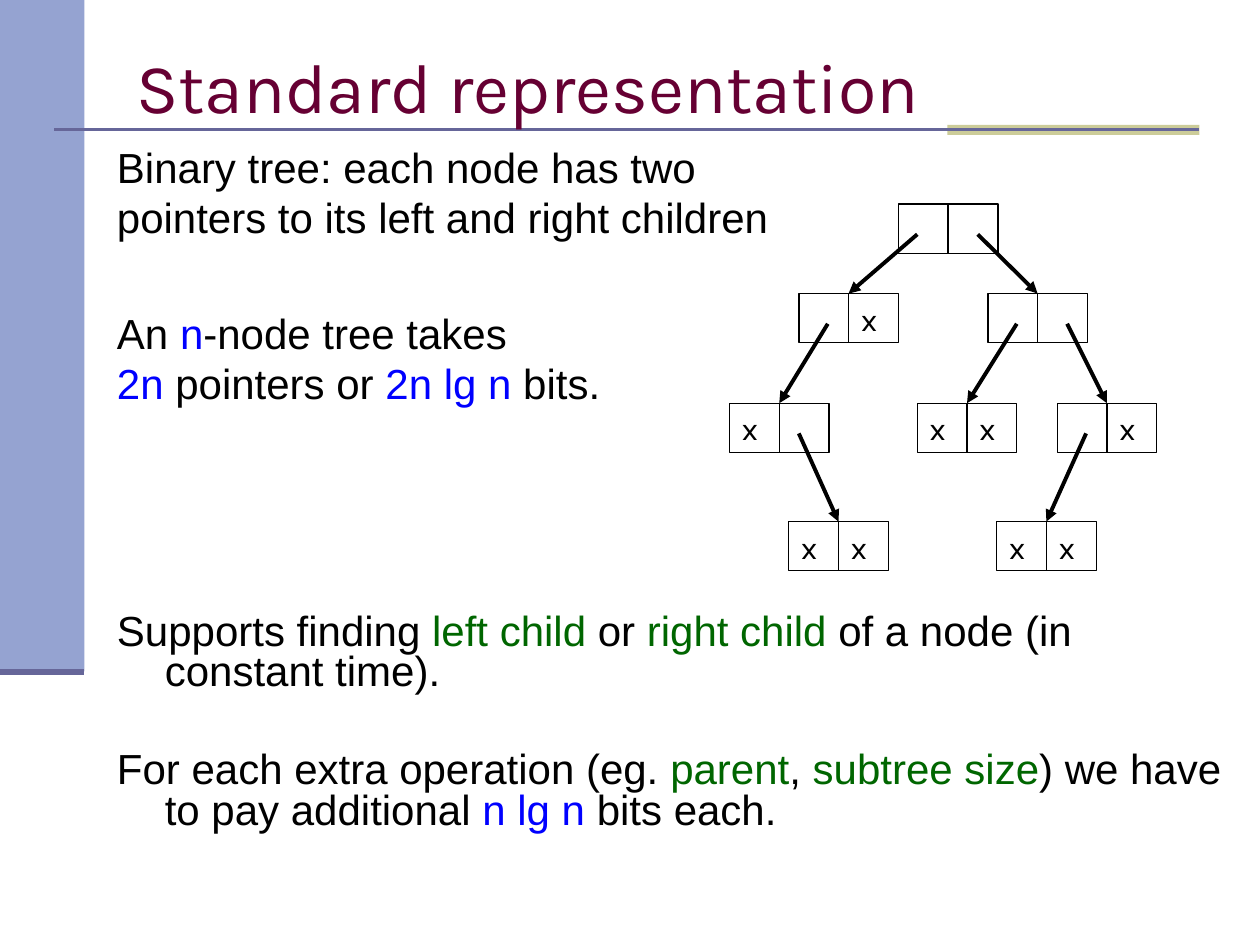
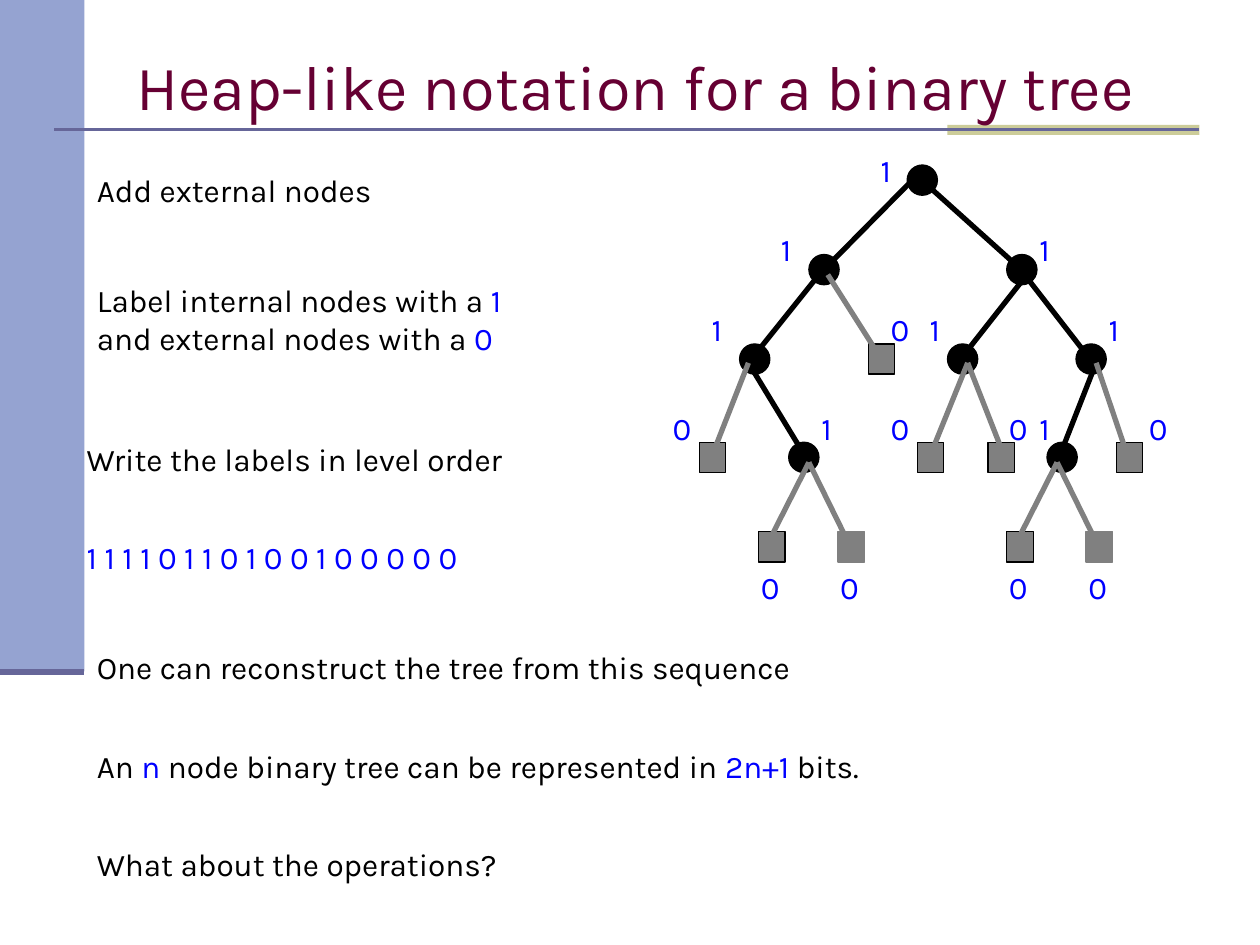
from lxml.etree import SubElement
from pptx import Presentation
from pptx.dml.color import RGBColor
from pptx.enum.shapes import MSO_CONNECTOR, MSO_SHAPE
from pptx.enum.text import MSO_ANCHOR, MSO_AUTO_SIZE, PP_ALIGN
from pptx.oxml.ns import qn
from pptx.util import Inches, Pt

BLACK = RGBColor(0x00, 0x00, 0x00)
WHITE = RGBColor(0xFF, 0xFF, 0xFF)
GRAY = RGBColor(0x80, 0x80, 0x80)
BLUE = RGBColor(0x00, 0x00, 0xFF)
GREEN = RGBColor(0x00, 0x66, 0x00)
MAROON = RGBColor(0x66, 0x00, 0x33)
PERIWINKLE = RGBColor(0x95, 0xA3, 0xD1)
SLATE = RGBColor(0x66, 0x66, 0x99)
KHAKI = RGBColor(0xCC, 0xCC, 0x99)

KARLA = {"name": "Karla", "size": Pt(18)}
ARIAL = {"name": "Arial", "size": Pt(24)}

SUMMARY = [
    (5.6, [("Binary tree: each node has two", BLACK)]),
    (5.6, [("pointers to its left and right children", BLACK)]),
    (43, [("An ", BLACK), ("n", BLUE), ("-node tree takes", BLACK)]),
    (5.6, [("2n", BLUE), (" pointers or ", BLACK), ("2n lg n", BLUE), (" bits.", BLACK)]),
    (118, [("Supports finding ", BLACK), ("left child", GREEN), (" or ", BLACK),
           ("right child", GREEN), (" of a node (in constant time).", BLACK)]),
    (33.2, [("For each extra operation (eg. ", BLACK), ("parent", GREEN), (", ", BLACK),
            ("subtree size", GREEN), (") we have to pay additional ", BLACK),
            ("n lg n", BLUE), (" bits each.", BLACK)]),
]

RECORDS = {
    "root": (2.13, 0.62), "L": (1.34, 1.33), "R": (2.84, 1.33),
    "LL": (0.79, 2.2), "RL": (2.28, 2.2), "RR": (3.39, 2.2),
    "LLR": (1.26, 3.14), "RRL": (2.91, 3.14),
}
POINTERS = [
    ("root", 0.15, "L"), ("root", 0.63, "R"), ("L", 0.23, "LL"), ("LL", 0.55, "LLR"),
    ("R", 0.23, "RL"), ("R", 0.63, "RR"), ("RR", 0.23, "RRL"),
]
RECORD_WIDTH, RECORD_HEIGHT = 0.79, 0.39

LEVELS = [
    (0.31, 0.15, [("1", 2.2, 1.89)]),
    (1.02, 0.78, [("1", 1.42, 1.1), ("1", 2.99, 3.15)]),
    (1.73, 1.41, [("1", 0.87, 0.55), ("0", 1.89, 1.97), ("1", 2.52, 2.28), ("1", 3.54, 3.7)]),
    (2.51, 2.2, [("0", 0.55, 0.24), ("1", 1.26, 1.42), ("0", 2.28, 1.97),
                 ("0", 2.84, 2.91), ("1", 3.31, 3.15), ("0", 3.86, 4.02)]),
    (3.22, 3.46, [("0", 1.02, 0.94), ("0", 1.65, 1.57), ("0", 2.99, 2.91), ("0", 3.62, 3.54)]),
]
UNOUTLINED = (1.65, 3.62)
INTERNAL_EDGES = [
    (2.28, 0.39, 1.5, 1.18), (1.5, 1.18, 0.94, 1.88), (0.94, 1.88, 1.42, 2.67),
    (2.36, 0.47, 3.15, 1.18), (3.15, 1.18, 2.6, 1.88), (3.07, 1.1, 3.62, 1.81),
    (3.7, 1.88, 3.39, 2.67),
]
EXTERNAL_EDGES = [
    (1.57, 1.18, 1.97, 1.81), (0.94, 1.88, 0.63, 2.67), (1.42, 2.67, 1.1, 3.3),
    (1.42, 2.67, 1.73, 3.3), (2.68, 1.88, 2.36, 2.67), (2.68, 1.88, 2.99, 2.67),
    (3.7, 1.88, 3.94, 2.59), (3.39, 2.67, 3.07, 3.3), (3.39, 2.67, 3.7, 3.3),
]
SEQUENCE = " ".join(bit for _, _, nodes in LEVELS for bit, _, _ in nodes)

STATEMENTS = [
    (0.08, 0, 2.63, 0.4, [[("Add external nodes", BLACK)]]),
    (0.08, 0.87, 3.85, 0.7, [[("Label internal nodes with a ", BLACK), ("1", BLUE)],
                             [("and external nodes with a ", BLACK), ("0", BLUE)]]),
    (0, 2.13, 3.93, 0.4, [[("Write the labels in level order", BLACK)]]),
    (0, 2.91, 4.33, 0.4, [[(SEQUENCE, BLUE)]]),
    (0.08, 3.78, 6.31, 0.4, [[("One can reconstruct the tree from this sequence", BLACK)]]),
    (0.08, 4.57, 7.18, 0.4, [[("An ", BLACK), ("n", BLUE),
                              (" node binary tree can be represented in ", BLACK),
                              ("2n+1", BLUE), (" bits.", BLACK)]]),
    (0.08, 5.35, 3.7, 0.4, [[("What about the operations?", BLACK)]]),
]


def apply(target, values):
    """Set every attribute named in values on target."""
    for attribute, value in values.items():
        setattr(target, attribute, value)


def add_block(slide, kind, left, top, width, height, fill, outline=None):
    """Add a filled preset shape with an optional thin outline."""
    block = slide.shapes.add_shape(kind, *map(Inches, (left, top, width, height)))
    block.shadow.inherit = False
    block.fill.solid()
    block.fill.fore_color.rgb = fill
    if outline is None:
        block.line.fill.background()
    else:
        block.line.color.rgb = outline
        block.line.width = Pt(0.75)


def add_rule(slide, x1, y1, x2, y2, color, weight, arrow=False):
    """Add a straight line, with an arrowhead at its end on request."""
    rule = slide.shapes.add_connector(MSO_CONNECTOR.STRAIGHT, *map(Inches, (x1, y1, x2, y2)))
    rule.line.color.rgb = color
    rule.line.width = Pt(weight)
    if arrow:
        SubElement(rule.line._get_or_add_ln(), qn("a:tailEnd"), type="triangle")
    SubElement(rule._element.spPr, qn("a:effectLst"))


def write_runs(paragraph, runs, font):
    """Append coloured runs in one font to a paragraph."""
    for text, color in runs:
        run = paragraph.add_run()
        run.text = text
        apply(run.font, font)
        run.font.color.rgb = color


def add_text(slide, left, top, width, height, paragraphs, font=KARLA):
    """Add a wrapped text box and return its paragraphs."""
    frame = slide.shapes.add_textbox(*map(Inches, (left, top, width, height))).text_frame
    frame.word_wrap = True
    for index, runs in enumerate(paragraphs):
        paragraph = frame.add_paragraph() if index else frame.paragraphs[0]
        write_runs(paragraph, runs, font)
    return frame.paragraphs


def start_slide(deck, heading, size):
    """Add a title-only slide with the side band, the rules and its heading."""
    slide = deck.slides.add_slide(deck.slide_layouts[5])
    add_block(slide, MSO_SHAPE.RECTANGLE, 0, 0, 0.67, 5.33, PERIWINKLE)
    add_block(slide, MSO_SHAPE.RECTANGLE, 7.52, 0.99, 2, 0.08, KHAKI)
    add_rule(slide, 0.43, 1.03, 9.52, 1.03, SLATE, 1.5)
    add_rule(slide, 0, 5.33, 0.67, 5.33, SLATE, 3.5)
    title = slide.shapes.title
    slide.shapes._spTree.append(title._element)
    apply(title, {"left": Inches(0.98), "top": Inches(0.28),
                  "width": Inches(8.5), "height": Inches(0.79)})
    apply(title.text_frame, {"word_wrap": True, "auto_size": MSO_AUTO_SIZE.NONE,
                             "vertical_anchor": MSO_ANCHOR.MIDDLE})
    paragraph = title.text_frame.paragraphs[0]
    paragraph.alignment = PP_ALIGN.LEFT
    write_runs(paragraph, [(heading, MAROON)], {"name": "Karla", "size": Pt(size)})
    return slide


def add_summary(slide, left, top, width, height):
    """Write the hanging paragraphs about the standard representation."""
    paragraphs = add_text(slide, left, top, width, height, [runs for _, runs in SUMMARY], ARIAL)
    for paragraph, (gap, _) in zip(paragraphs, SUMMARY):
        apply(paragraph, {"line_spacing": 0.8, "space_before": Pt(gap)})
        properties = paragraph._p.get_or_add_pPr()
        properties.set("marL", str(Inches(0.38)))
        properties.set("indent", str(-Inches(0.38)))


def add_pointer_tree(slide, left, top):
    """Draw two-field records joined by arrows, with x in each empty field."""
    half = RECORD_WIDTH / 2
    used = {(parent, start > half) for parent, start, _ in POINTERS}
    for x, y in RECORDS.values():
        add_block(slide, MSO_SHAPE.RECTANGLE, left + x, top + y,
                  RECORD_WIDTH, RECORD_HEIGHT, WHITE, BLACK)
        middle = left + x + half
        add_rule(slide, middle, top + y, middle, top + y + RECORD_HEIGHT, BLACK, 0.75)
    for parent, start, child in POINTERS:
        (x, y), (child_x, child_y) = RECORDS[parent], RECORDS[child]
        add_rule(slide, left + x + start, top + y + 0.24,
                 left + child_x + half, top + child_y, BLACK, 2.25, arrow=True)
    for record, (x, y) in RECORDS.items():
        for side in (False, True):
            if (record, side) not in used:
                add_text(slide, left + x + side * half, top + y, half, 0.4, [[("x", BLACK)]])


def add_labelled_tree(slide, left, top):
    """Draw internal and external nodes, their edges and their bits."""
    for node_top, _, nodes in LEVELS:
        for bit, x, _ in nodes:
            internal = bit == "1"
            kind, width, fill = ((MSO_SHAPE.OVAL, 0.24, BLACK) if internal
                                 else (MSO_SHAPE.RECTANGLE, 0.21, GRAY))
            outline = GRAY if x in UNOUTLINED else BLACK
            add_block(slide, kind, left + x, top + node_top, width, 0.24, fill, outline)
    for edges, color in ((INTERNAL_EDGES, BLACK), (EXTERNAL_EDGES, GRAY)):
        for x1, y1, x2, y2 in edges:
            add_rule(slide, left + x1, top + y1, left + x2, top + y2, color, 3)
    for _, label_top, nodes in LEVELS:
        for bit, _, label_x in nodes:
            add_text(slide, left + label_x, top + label_top, 0.36, 0.4, [[(bit, BLUE)]])


def add_statements(slide, left, top):
    """Write the steps and remarks beside and below the tree."""
    for x, y, width, height, paragraphs in STATEMENTS:
        add_text(slide, left + x, top + y, width, height, paragraphs)


def main():
    """Build and save both slides."""
    deck = Presentation()
    apply(deck, {"slide_width": Inches(10), "slide_height": Inches(7.5)})
    standard = start_slide(deck, "Standard representation", 40)
    add_summary(standard, 0.83, 1.15, 8.98, 5.75)
    add_pointer_tree(standard, 5, 1)
    heap = start_slide(deck, "Heap-like notation for a binary tree", 36)
    add_labelled_tree(heap, 5, 1)
    add_statements(heap, 0.59, 1.31)
    deck.save("out.pptx")


if __name__ == "__main__":
    main()
